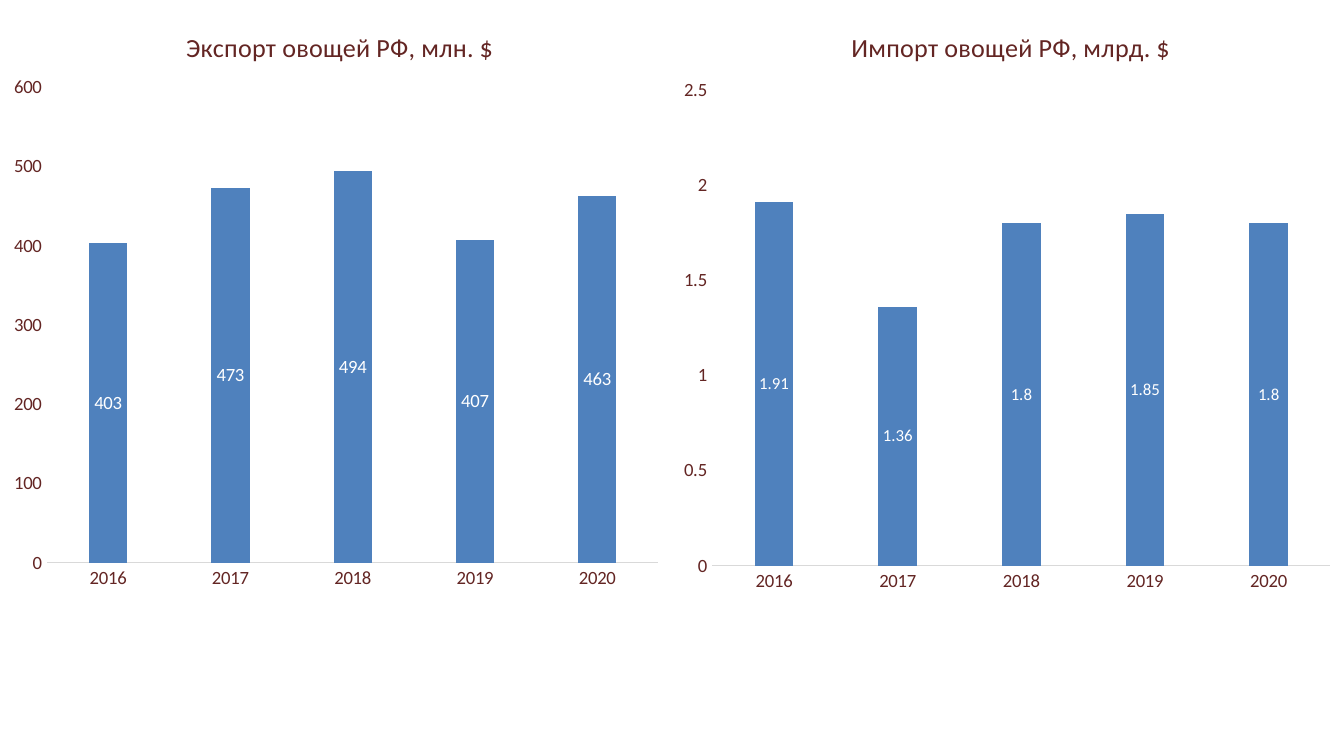
from lxml import etree
from pptx import Presentation
from pptx.chart.data import CategoryChartData
from pptx.dml.color import RGBColor
from pptx.enum.chart import XL_CHART_TYPE as ChartType
from pptx.enum.chart import XL_LABEL_POSITION as LabelPosition
from pptx.enum.chart import XL_TICK_MARK as TickMark
from pptx.oxml.ns import qn
from pptx.util import Pt

COLORS = {"text": "632523", "bar": "4F81BD", "label": "FFFFFF",
          "axis": "D9D9D9", "grid": "FFFFFF"}
FONT = "Calibri"
YEARS = ["2016", "2017", "2018", "2019", "2020"]
CHART_WIDTH, CHART_HEIGHT = 360, 322.5


def color(name):
    return RGBColor.from_string(COLORS[name])


def style_font(font, size, color_name):
    font.name = FONT
    font.size = Pt(size)
    font.bold = False
    font.color.rgb = color(color_name)


def style_line(line, color_name):
    line.color.rgb = color(color_name)
    line.width = Pt(0.75)


def set_layout(element, index, inner=False, **fractions):
    """Place a chart part by fractions of the chart's width and height."""
    for old in element.findall(qn("c:layout")):
        element.remove(old)
    layout = etree.Element(qn("c:layout"))
    manual = etree.SubElement(layout, qn("c:manualLayout"))
    if inner:
        etree.SubElement(manual, qn("c:layoutTarget"), val="inner")
    for key in ("x", "y"):
        etree.SubElement(manual, qn(f"c:{key}Mode"), val="edge")
    for key, value in fractions.items():
        etree.SubElement(manual, qn(f"c:{key}"), val=str(value))
    element.insert(index, layout)


def style_title(chart, title, left):
    chart.has_title = True
    text_frame = chart.chart_title.text_frame
    text_frame.text = title
    style_font(text_frame.paragraphs[0].runs[0].font, 14, "text")
    chart.chart_title.include_in_layout = False
    set_layout(chart._chartSpace.find(".//" + qn("c:title")), 1,
               x=left, y=0.04)


def style_axes(chart, maximum, step, number_format):
    for axis in (chart.category_axis, chart.value_axis):
        axis.major_tick_mark = axis.minor_tick_mark = TickMark.NONE
        style_font(axis.tick_labels.font, 10, "text")
    style_line(chart.category_axis.format.line, "axis")
    value_axis = chart.value_axis
    value_axis.minimum_scale = 0
    value_axis.maximum_scale = maximum
    value_axis.major_unit = step
    value_axis.format.line.fill.background()
    style_line(value_axis.major_gridlines.format.line, "grid")
    value_axis.tick_labels.number_format = number_format
    value_axis.tick_labels.number_format_is_linked = False


def style_bars(chart, label_size):
    plot = chart.plots[0]
    plot.gap_width = 219
    plot.overlap = -27
    plot.vary_by_categories = False
    series = plot.series[0]
    series.format.fill.solid()
    series.format.fill.fore_color.rgb = color("bar")
    labels = series.data_labels
    labels.show_value = True
    labels.position = LabelPosition.CENTER
    style_font(labels.font, label_size, "label")


def add_column_chart(slide, left, title, title_left, values, maximum, step,
                     number_format, label_size, plot_area):
    data = CategoryChartData()
    data.categories = YEARS
    data.add_series("Series 1", values)
    chart = slide.shapes.add_chart(
        ChartType.COLUMN_CLUSTERED, Pt(left), Pt(0),
        Pt(CHART_WIDTH), Pt(CHART_HEIGHT), data).chart
    chart.has_legend = False
    chart.font.name = FONT
    chart.font.size = Pt(10)
    style_title(chart, title, title_left)
    style_axes(chart, maximum, step, number_format)
    style_bars(chart, label_size)
    set_layout(chart._chartSpace.find(".//" + qn("c:plotArea")), 0,
               inner=True, **plot_area)


def main():
    presentation = Presentation()
    presentation.slide_width = Pt(2 * CHART_WIDTH)
    presentation.slide_height = Pt(405)
    slide = presentation.slides.add_slide(presentation.slide_layouts[6])
    add_column_chart(slide, 0, "Экспорт овощей РФ, млн. $", 0.27,
                     [403, 473, 494, 407, 463], 600, 100, "0", 10,
                     {"x": 0.07, "y": 0.145, "w": 0.91, "h": 0.79})
    add_column_chart(slide, CHART_WIDTH, "Импорт овощей РФ, млрд. $", 0.26,
                     [1.91, 1.36, 1.8, 1.85, 1.8], 2.5, 0.5, "General", 9,
                     {"x": 0.06, "y": 0.15, "w": 0.92, "h": 0.79})
    presentation.save("out.pptx")


if __name__ == "__main__":
    main()
